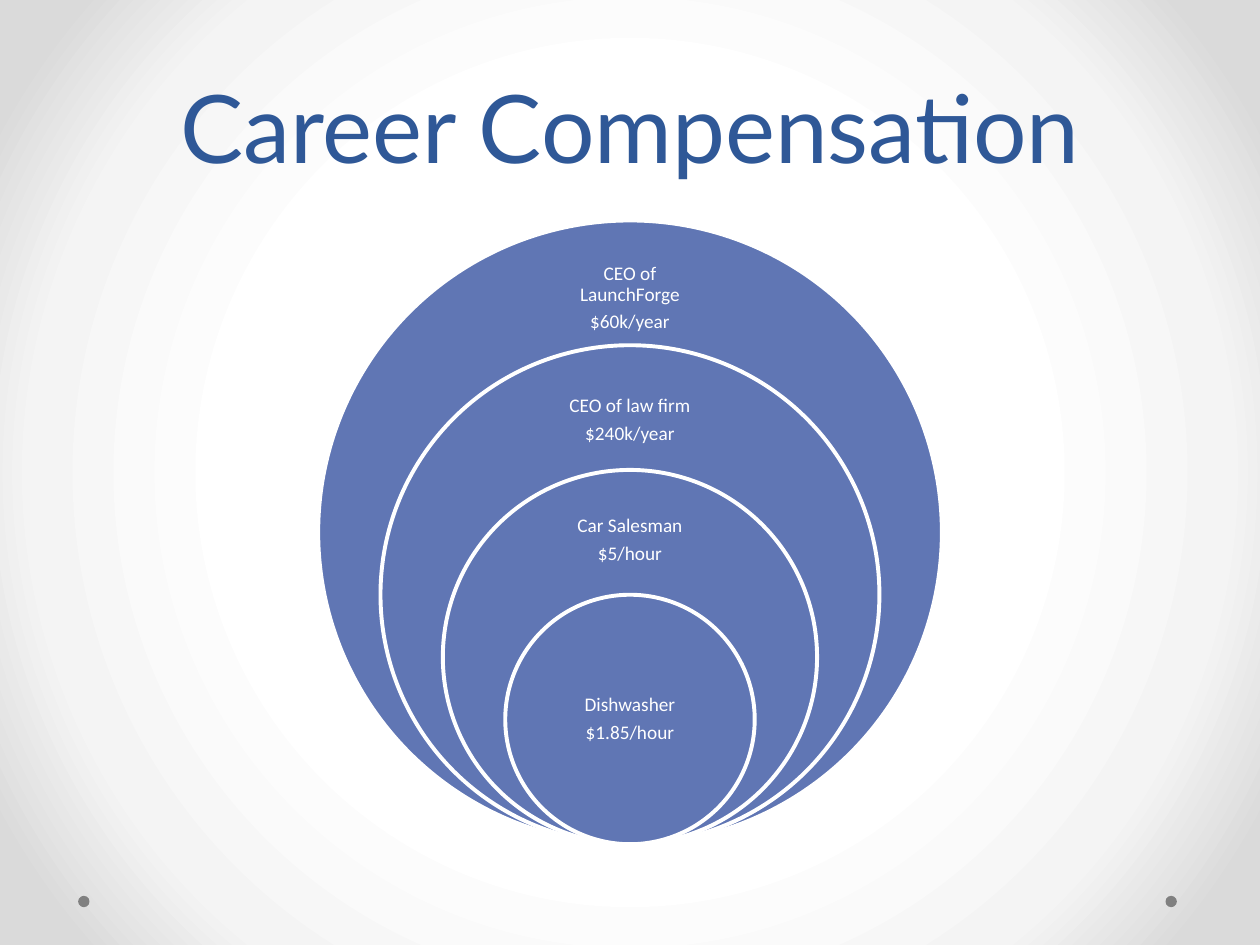
from pptx import Presentation
from pptx.dml.color import RGBColor
from pptx.enum.shapes import MSO_SHAPE
from pptx.enum.text import MSO_ANCHOR, PP_ALIGN
from pptx.oxml import parse_xml
from pptx.oxml.ns import nsdecls
from pptx.util import Inches, Pt

WHITE = RGBColor(0xFF, 0xFF, 0xFF)
BLUE = RGBColor(0x60, 0x76, 0xB4)
NAVY = RGBColor(0x2F, 0x58, 0x97)
GRAY = RGBColor(0x80, 0x80, 0x80)
GLOW = [(50, WHITE), (76, RGBColor(0xF4, 0xF4, 0xF4)), (92, RGBColor(0xDA, 0xDA, 0xDA))]

W, H = Inches(10), Inches(7.5)

# Job, pay, and the label's top and height as shares of its circle
JOBS = [
    ("CEO of LaunchForge", "$60k/year", 0.05, 0.15),
    ("CEO of law firm", "$240k/year", 0.06, 0.18),
    ("Car Salesman", "$5/hour", 0.075, 0.225),
    ("Dishwasher", "$1.85/hour", 0.25, 0.5),
]


def set_radial_background(s):
    stops = "".join(
        f'<a:gs pos="{pos * 1000}"><a:srgbClr val="{color}"/></a:gs>' for pos, color in GLOW)
    grad = parse_xml(
        f'<a:gradFill {nsdecls("a")} rotWithShape="1"><a:gsLst>{stops}</a:gsLst>'
        '<a:path path="circle"><a:fillToRect l="50000" t="50000" r="50000" b="50000"/></a:path>'
        '</a:gradFill>')
    s.background.fill.solid()
    bg = s.background.fill._xPr
    bg.replace(bg[0], grad)


def add_circle(shapes, left, top, size, color, outline=None):
    sp = shapes.add_shape(MSO_SHAPE.OVAL, int(left), int(top), int(size), int(size))
    sp.shadow.inherit = False
    sp.fill.solid()
    sp.fill.fore_color.rgb = color
    if outline is None:
        sp.line.fill.background()
    else:
        sp.line.color.rgb = outline
        sp.line.width = Pt(2.25)


def add_text(shapes, box, lines, font, size, color, anchor, spacing, after=0):
    tf = shapes.add_textbox(*map(int, box)).text_frame
    tf.word_wrap = True
    tf.vertical_anchor = anchor
    tf.text = "\n".join(lines)
    for p in tf.paragraphs:
        p.alignment = PP_ALIGN.CENTER
        p.line_spacing = spacing
        p.space_after = Pt(after)
        p.font.name = font
        p.font.size = Pt(size)
        p.font.color.rgb = color
    return tf


def add_title(s, box):
    add_text(s.shapes, box, ["Career Compensation"], "Lato", 54, NAVY,
             MSO_ANCHOR.BOTTOM, Pt(58))


def add_corner_dots(s):
    for x in (0.062, 0.925):
        add_circle(s.shapes, W * x, H * 0.948, W * 0.009, GRAY)


def add_nested_circles(s, left, top, size):
    """Stack circles that share their lowest point, each one step smaller."""
    shapes = s.shapes.add_group_shape().shapes
    center, bottom = left + size / 2, top + size
    label_w = size * 0.28
    for i, (job, pay, label_top, label_h) in enumerate(JOBS):
        d = size * (1 - i / (len(JOBS) + 1))
        y = bottom - d
        add_circle(shapes, center - d / 2, y, d, BLUE, WHITE)
        box = (center - label_w / 2, y + d * label_top, label_w, d * label_h)
        tf = add_text(shapes, box, [job, pay], "Calibri", 11, WHITE,
                      MSO_ANCHOR.MIDDLE, 0.9, 3.85)
        tf.margin_left = tf.margin_right = Inches(0.09)
        tf.margin_top = tf.margin_bottom = Inches(0.09)


def main():
    prs = Presentation()
    prs.slide_width, prs.slide_height = W, H
    s = prs.slides.add_slide(prs.slide_layouts[6])
    set_radial_background(s)
    add_corner_dots(s)
    size = H * 0.66
    add_nested_circles(s, (W - size) / 2, Inches(1.75), size)
    add_title(s, (W * 0.05, Inches(0.17), W * 0.9, Inches(1.33)))
    prs.save("out.pptx")


if __name__ == "__main__":
    main()
